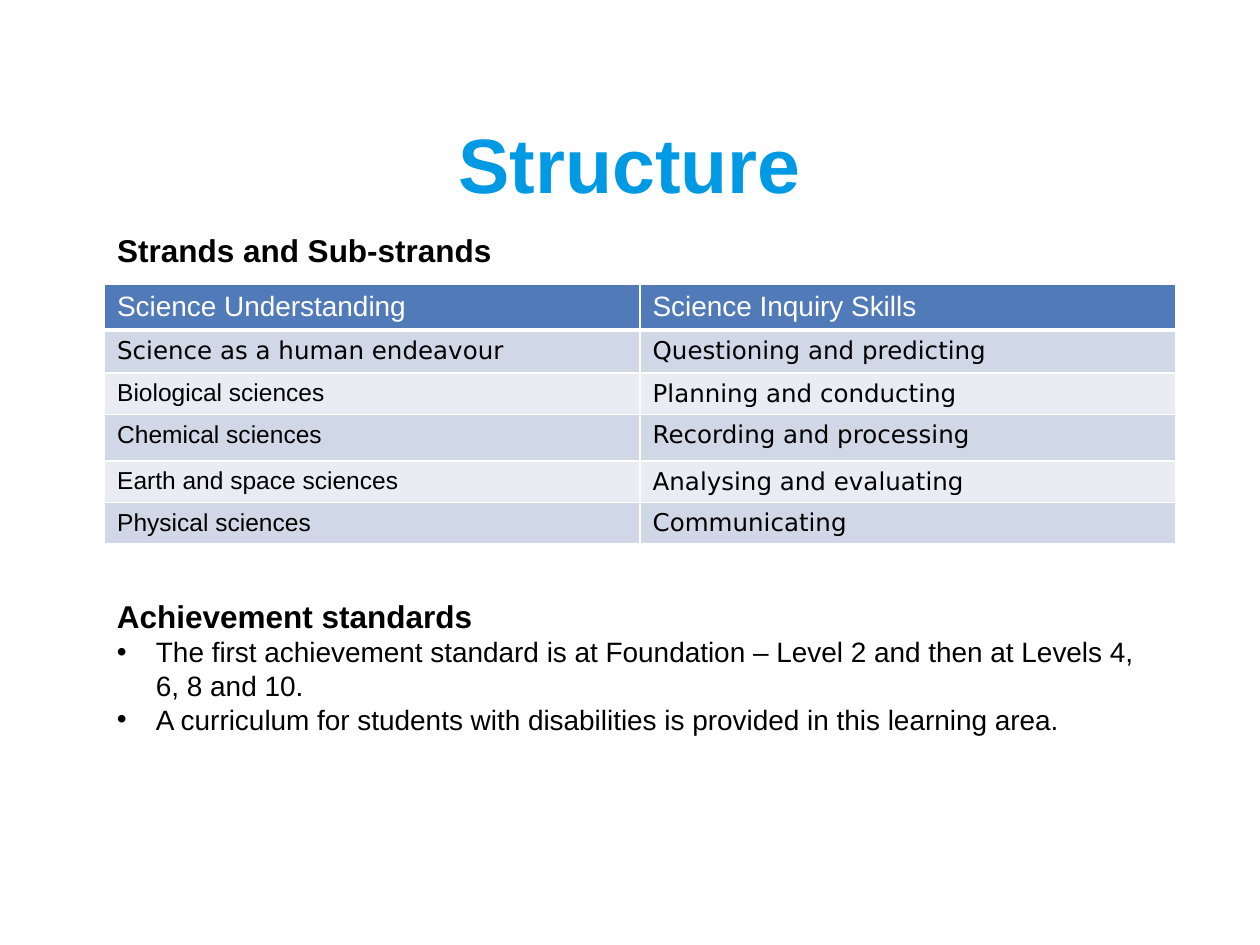
from dataclasses import dataclass

from lxml import etree
from pptx import Presentation
from pptx import util as u
from pptx.dml import color
from pptx.enum import text
from pptx.oxml import ns


@dataclass(frozen=True)
class Theme:
    sans: str = "Arial"
    alt: str = "DejaVu Sans"
    blue: str = "0099E3"
    head: str = "517AB8"
    bands: tuple = ("D0D7E6", "E9ECF3")
    ink: str = "000000"
    white: str = "FFFFFF"
    title: int = 44
    sub: int = 18
    body: int = 16
    cell: int = 14


def rgb(code):
    return color.RGBColor.from_string(code)


def add(parent, tag, **attrs):
    return etree.SubElement(parent, ns.qn(tag), attrs)


def write(par, words, size, font, ink, bold=False, align=None, bullet=None):
    props = par._p.get_or_add_pPr()
    gap = u.Inches(0.31) if bullet else 0
    props.set("marL", str(gap))
    props.set("indent", str(-gap))
    if bullet:
        add(props, "a:buFont", typeface="Arial")
        add(props, "a:buChar", char=bullet)
    else:
        add(props, "a:buNone")
    par.space_before = u.Pt(0)
    if align is not None:
        par.alignment = align
    run = par.add_run()
    run.text = words
    run.font.size = u.Pt(size)
    run.font.name = font
    run.font.bold = bold
    run.font.color.rgb = rgb(ink)


class Deck:
    def __init__(self, theme):
        self.theme = theme
        self.file = Presentation()
        self.file.slide_width = u.Inches(10)
        self.file.slide_height = u.Inches(7.5)
        self.slide = self.file.slides.add_slide(self.file.slide_layouts[1])

    def place(self, shape, box):
        shape.left, shape.top, shape.width, shape.height = map(u.Inches, box)
        frame = shape.text_frame
        frame.word_wrap = True
        frame.auto_size = text.MSO_AUTO_SIZE.NONE
        return frame

    def title(self, words, box):
        t = self.theme
        frame = self.place(self.slide.shapes.title, box)
        frame.vertical_anchor = text.MSO_ANCHOR.MIDDLE
        write(frame.paragraphs[0], words, t.title, t.sans, t.blue,
              bold=True, align=text.PP_ALIGN.CENTER)

    def label(self, words, box):
        t = self.theme
        frame = self.place(self.slide.placeholders[1], box)
        write(frame.paragraphs[0], words, t.sub, t.sans, t.ink, bold=True)

    def notes(self, head, items, box):
        t = self.theme
        frame = self.place(self.slide.shapes.add_textbox(0, 0, 0, 0), box)
        write(frame.paragraphs[0], head, t.sub, t.sans, t.ink, bold=True)
        for item in items:
            write(frame.add_paragraph(), item, t.body, t.sans, t.ink, bullet="•")

    def edge(self, cell, top, bottom):
        props = cell._tc.get_or_add_tcPr()
        sides = {"a:lnL": 1, "a:lnR": 1, "a:lnT": top, "a:lnB": bottom}
        for tag, width in sides.items():
            line = add(props, tag, w=str(u.Pt(width)))
            add(add(line, "a:solidFill"), "a:srgbClr", val=self.theme.white)

    def table(self, rows, highs, box):
        t = self.theme
        grid = self.slide.shapes.add_table(
            len(rows), len(rows[0]), *map(u.Inches, box)).table
        for r, (row, high) in enumerate(zip(rows, highs)):
            grid.rows[r].height = u.Inches(high)
            fill = t.bands[(r - 1) % 2] if r else t.head
            for c, words in enumerate(row):
                cell = grid.cell(r, c)
                self.edge(cell, 3 if r == 1 else 1, 1 if r else 3)
                cell.fill.solid()
                cell.fill.fore_color.rgb = rgb(fill)
                font = t.alt if r == 1 or (r and c) else t.sans
                write(cell.text_frame.paragraphs[0], words,
                      t.cell if r else t.body, font, t.ink if r else t.white)


def main():
    deck = Deck(Theme())
    deck.title("Structure", (0.75, 0.67, 8.5, 1.25))
    deck.label("Strands and Sub-strands", (0.83, 1.78, 8.5, 0.4))
    rows = [
        ("Science Understanding", "Science Inquiry Skills"),
        ("Science as a human endeavour", "Questioning and predicting"),
        ("Biological sciences", "Planning and conducting"),
        ("Chemical sciences", "Recording and processing"),
        ("Earth and space sciences", "Analysing and evaluating"),
        ("Physical sciences", "Communicating"),
    ]
    highs = (0.36, 0.34, 0.33, 0.37, 0.33, 0.33)
    deck.table(rows, highs, (0.83, 2.26, 8.5, sum(highs)))
    deck.notes("Achievement standards", [
        "The first achievement standard is at Foundation – Level 2 "
        "and then at Levels 4, 6, 8 and 10.",
        "A curriculum for students with disabilities is provided "
        "in this learning area.",
    ], (0.83, 4.69, 8.43, 1.21))
    deck.file.save("out.pptx")


if __name__ == "__main__":
    main()
